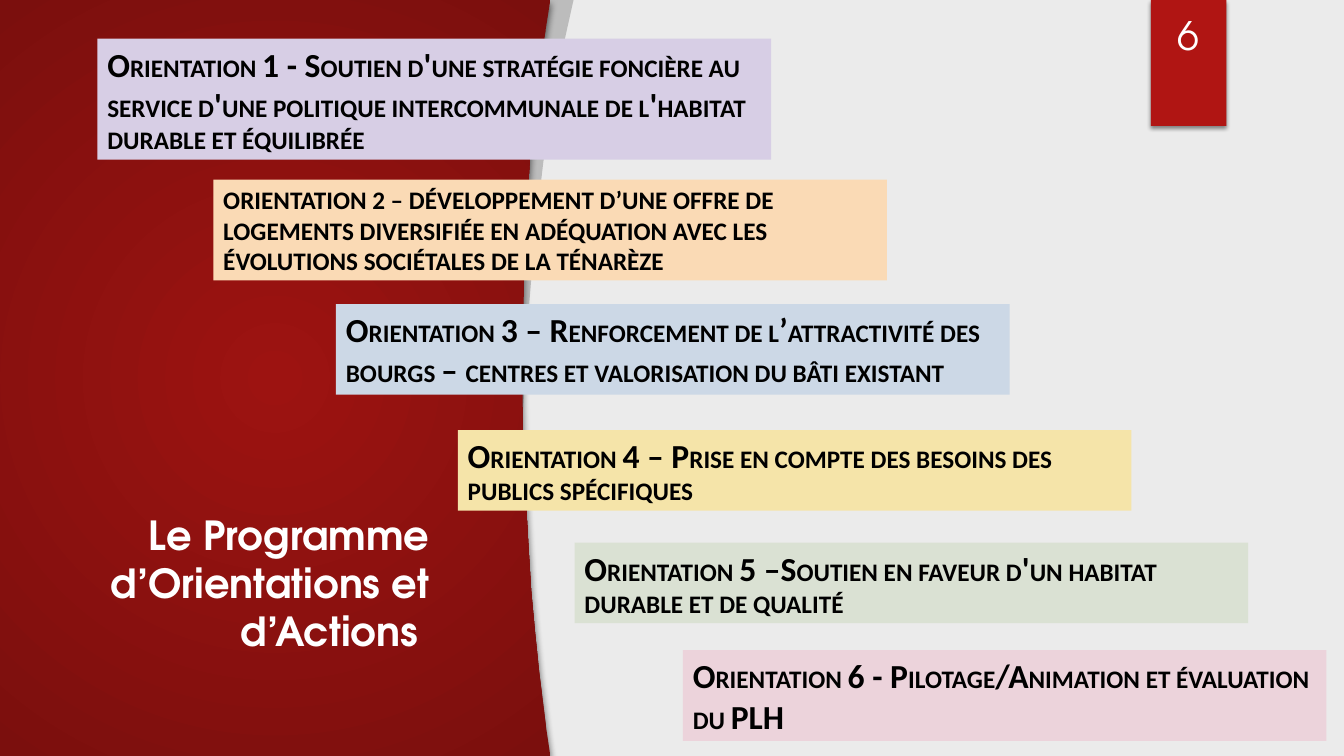
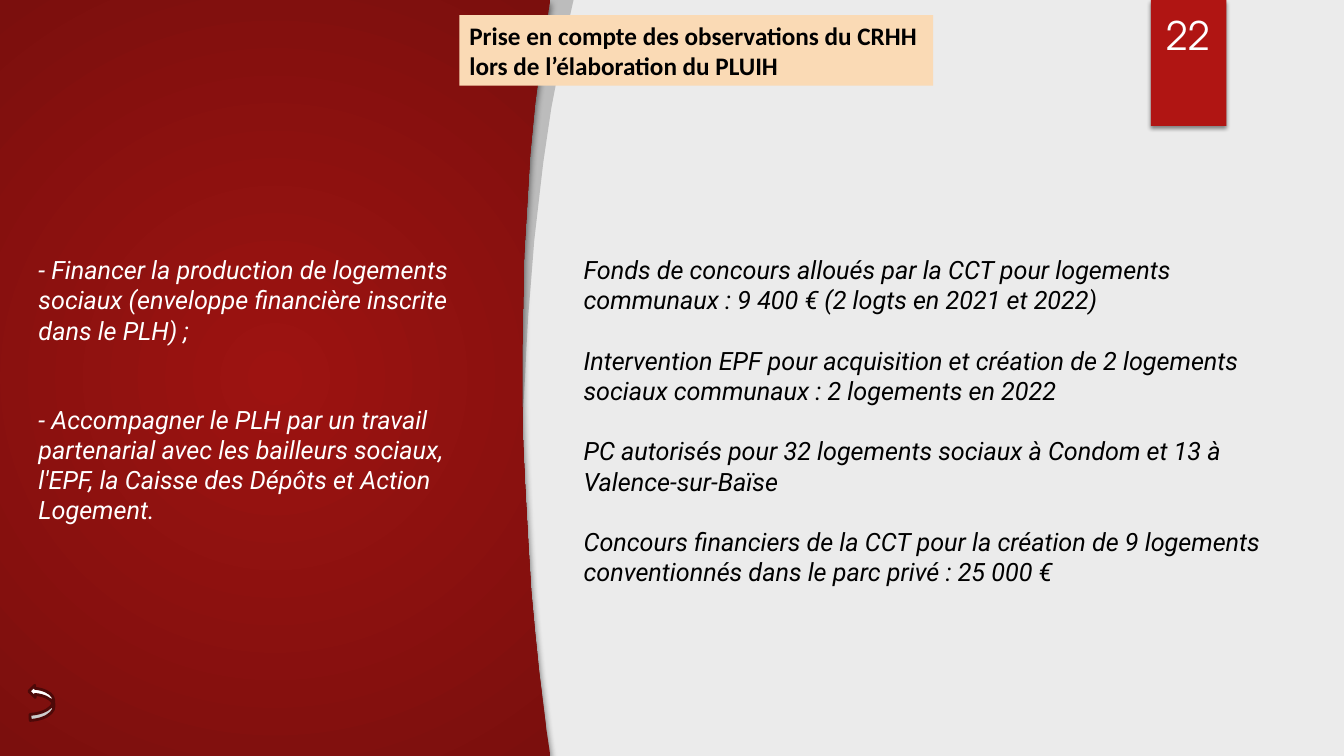
from dataclasses import dataclass
from itertools import groupby

from lxml import etree
from pptx import Presentation
from pptx import util as u
from pptx.dml.color import RGBColor
from pptx.enum import shapes, text
from pptx.oxml import parse_xml
from pptx.oxml.ns import nsdecls, qn


@dataclass(frozen=True)
class Theme:
    ground: str = "EBEBEB"
    panel_centre: str = "9D1311"
    panel_rim: str = "7B0F0D"
    ribbon: str = "B01513"
    arrow_line: str = "4D0908"
    white: str = "FFFFFF"
    black: str = "000000"
    lilac: str = "D7CEE5"
    peach: str = "FADAB5"
    blue: str = "CCD8E6"
    yellow: str = "F5E4A9"
    green: str = "DAE1D3"
    pink: str = "ECD3DB"
    title_font: str = "TeX Gyre Adventor"
    card_font: str = "Calibri"
    body_font: str = "Roboto"
    title_size: float = 28.6
    number_size: float = 28
    capital_size: float = 24
    text_size: float = 18


T = Theme()
COLS, ROWS = 160, 90

prs = Presentation()
prs.slide_width, prs.slide_height = u.Inches(13.333), u.Inches(7.5)
CELL = prs.slide_height / ROWS

# Curve of the red panel and of the grey band behind it, in inches
PANEL_EDGE = [
    (5.46, 0), (5.38, 0.51), (5.31, 1.02), (5.26, 1.53), (5.23, 2.04),
    (5.2, 2.53), (5.19, 3.02), (5.18, 3.5), (5.18, 3.96), (5.19, 4.41),
    (5.21, 4.83), (5.24, 5.37), (5.27, 5.86), (5.31, 6.29), (5.35, 6.67),
    (5.39, 6.99), (5.42, 7.23), (5.46, 7.5)]
BAND_EDGE = [
    (5.69, 0), (5.63, 0.27), (5.57, 0.54), (5.52, 0.81), (5.47, 1.07),
    (5.43, 1.34), (5.39, 1.61), (5.36, 1.87), (5.33, 2.13), (5.3, 2.39),
    (5.28, 2.65), (5.26, 2.9), (5.24, 3.14), (5.22, 3.5), (5.21, 3.73),
    (5.19, 4.06)]

# Left, top, width, height in grid cells; capitals are drawn larger
ORIENTATIONS = [
    ((11.6, 4.6, 80.2, 14.4), T.lilac,
     "Orientation 1 - Soutien d'une stratégie foncière au service "
     "d'une politique intercommunale de l'habitat durable et équilibrée"),
    ((25.4, 21.4, 80.2, 12), T.peach,
     "ORIENTATION 2 – DÉVELOPPEMENT D’UNE OFFRE DE LOGEMENTS DIVERSIFIÉE "
     "EN ADÉQUATION AVEC LES ÉVOLUTIONS SOCIÉTALES DE LA TÉNARÈZE"),
    ((40, 36.2, 80.2, 10.8), T.blue,
     "Orientation 3 – Renforcement de l’attractivité des bourgs – "
     "centres et valorisation du bâti existant"),
    ((54.5, 51.2, 80.2, 9.6), T.yellow,
     "Orientation 4 – Prise en compte des besoins des publics spécifiques"),
    ((68.4, 64.6, 80.2, 9.6), T.green,
     "Orientation 5 –Soutien en faveur d'un habitat durable et de qualité"),
    ((81.3, 77.4, 76.6, 10.8), T.pink,
     "Orientation 6 - Pilotage/Animation et évaluation du PLH"),
]
REQUESTS = [
    "- Financer la production de logements sociaux (enveloppe financière "
    "inscrite dans le PLH) ;",
    "- Accompagner le PLH par un travail partenarial avec les bailleurs "
    "sociaux, l'EPF, la Caisse des Dépôts et Action Logement.",
]
ANSWERS = [
    "Fonds de concours alloués par la CCT pour logements communaux : "
    "9 400 € (2 logts en 2021 et 2022)",
    "Intervention EPF pour acquisition et création de 2 logements sociaux "
    "communaux : 2 logements en 2022",
    "PC autorisés pour 32 logements sociaux à Condom et 13 à "
    "Valence-sur-Baïse",
    "Concours financiers de la CCT pour la création de 9 logements "
    "conventionnés dans le parc privé : 25 000 €",
]


def place(box):
    return [u.Emu(round(n * CELL)) for n in box]


def paint(sp, fill):
    sp.fill.solid()
    sp.fill.fore_color.rgb = RGBColor.from_string(fill)
    sp.line.fill.background()
    sp.shadow.inherit = False


def cast_shadow(sp, alpha, blur, dist):
    effects = sp._element.spPr.find(qn("a:effectLst"))
    effects.append(parse_xml(
        f'<a:outerShdw {nsdecls("a")} blurRad="{u.Pt(blur)}" '
        f'dist="{u.Pt(dist)}" dir="5400000" rotWithShape="0">'
        f'<a:srgbClr val="{T.black}"><a:alpha val="{alpha * 1000}"/>'
        '</a:srgbClr></a:outerShdw>'))


def radial_fill(sp, centre, rim):
    solid = sp._element.spPr.find(qn("a:solidFill"))
    solid.getparent().replace(solid, parse_xml(
        f'<a:gradFill {nsdecls("a")} rotWithShape="1"><a:gsLst>'
        f'<a:gs pos="0"><a:srgbClr val="{centre}"/></a:gs>'
        f'<a:gs pos="100000"><a:srgbClr val="{rim}"/></a:gs></a:gsLst>'
        '<a:path path="circle"><a:fillToRect l="50000" t="50000" '
        'r="50000" b="50000"/></a:path></a:gradFill>'))


def outline(s, points, fill):
    start, *rest = [(u.Inches(x), u.Inches(y)) for x, y in points]
    builder = s.shapes.build_freeform(*start, scale=1.0)
    builder.add_line_segments(rest, close=True)
    sp = builder.convert_to_shape()
    paint(sp, fill)
    return sp


def rectangle(s, box, fill):
    sp = s.shapes.add_shape(shapes.MSO_SHAPE.RECTANGLE, *place(box))
    paint(sp, fill)
    return sp


def style(r, font, size, color, bold=False, italic=False):
    r.font.name, r.font.size = font, u.Pt(size)
    r.font.bold, r.font.italic = bold, italic
    r.font.color.rgb = RGBColor.from_string(color)


def text_box(s, box, paragraphs, look, align=text.PP_ALIGN.LEFT,
             anchor=text.MSO_ANCHOR.TOP, gap=0):
    tf = s.shapes.add_textbox(*place(box)).text_frame
    tf.word_wrap = True
    tf.vertical_anchor = anchor
    tf.text = "\n".join(paragraphs)
    for i, p in enumerate(tf.paragraphs):
        p.alignment = align
        if i:
            p.space_before = u.Pt(gap)
        style(p.runs[0], **look)


def small_caps(words):
    """Split into (text, size) runs; a space keeps the size before it."""
    if words.isupper():
        return [(words, T.text_size)]
    sized, size = [], T.capital_size
    for c in words:
        if c != " ":
            size = T.text_size if c.islower() else T.capital_size
        sized.append((c.upper(), size))
    return [("".join(c for c, _ in run), size)
            for size, run in groupby(sized, key=lambda pair: pair[1])]


def card(s, box, fill, runs):
    tf = rectangle(s, box, fill).text_frame
    tf.word_wrap = True
    tf.vertical_anchor = text.MSO_ANCHOR.TOP
    p = tf.paragraphs[0]
    p.alignment = text.PP_ALIGN.LEFT
    for words, size in runs:
        r = p.add_run()
        r.text = words
        style(r, T.card_font, size, T.black, bold=True)


def number_ribbon(s, box, number):
    left, top, width, height = box
    cast_shadow(rectangle(s, box, T.ribbon), 45, 3, 2)
    text_box(s, (left - 1, top + 1.2, width + 2, height * 0.42), [number],
             dict(font=T.title_font, size=T.number_size, color=T.white),
             text.PP_ALIGN.CENTER, text.MSO_ANCHOR.BOTTOM)


def base_slide(number):
    s = prs.slides.add_slide(prs.slide_layouts[6])
    s.background.fill.solid()
    s.background.fill.fore_color.rgb = RGBColor.from_string(T.ground)
    # Grey band, then the curved red panel
    band = outline(s, BAND_EDGE + [(5.12, 4.02), (5.09, 2), (5.17, 0)],
                   T.black)
    color = band._element.spPr.find(f".//{qn('a:srgbClr')}")
    etree.SubElement(color, qn("a:alpha")).set("val", "20000")
    panel = outline(s, PANEL_EDGE + [(0, 7.5), (0, 0)], T.panel_rim)
    radial_fill(panel, T.panel_centre, T.panel_rim)
    cast_shadow(panel, 60, 5, 3)
    number_ribbon(s, (137, 0, 9, 15), number)
    return s


def return_arrow(s, box):
    sp = s.shapes.add_shape(shapes.MSO_SHAPE.CURVED_RIGHT_ARROW, *place(box))
    paint(sp, T.white)
    sp.line.color.rgb = RGBColor.from_string(T.arrow_line)
    sp.line.width = u.Pt(2)
    sp.rotation = 177.4


def orientations_slide():
    s = base_slide("6")
    text_box(s, (0.7, 60.2, 51.6, 18.4),
             ["Le Programme d’Orientations et d’Actions "],
             dict(font=T.title_font, size=T.title_size, color=T.white,
                  bold=True), text.PP_ALIGN.RIGHT)
    for box, fill, words in ORIENTATIONS:
        card(s, box, fill, small_caps(words))


def observations_slide():
    s = base_slide("22")
    card(s, (54.7, 1.8, 56.4, 8.4), T.peach,
         [("Prise en compte des observations du CRHH lors de "
           "l’élaboration du PLUIH", T.text_size)])
    return_arrow(s, (3.5, 81.5, 2.9, 4.2))
    # Requests on the panel, answers beside it
    for box, words, color, gap in (
            ((3.4, 29.7, 54.8, 33.7), REQUESTS, T.white, 42),
            ((68.3, 29.7, 88.9, 44.5), ANSWERS, T.black, 21.5)):
        text_box(s, box, words, dict(font=T.body_font, size=T.text_size,
                                     color=color, italic=True), gap=gap)


def main():
    orientations_slide()
    observations_slide()
    prs.save("out.pptx")


if __name__ == "__main__":
    main()
